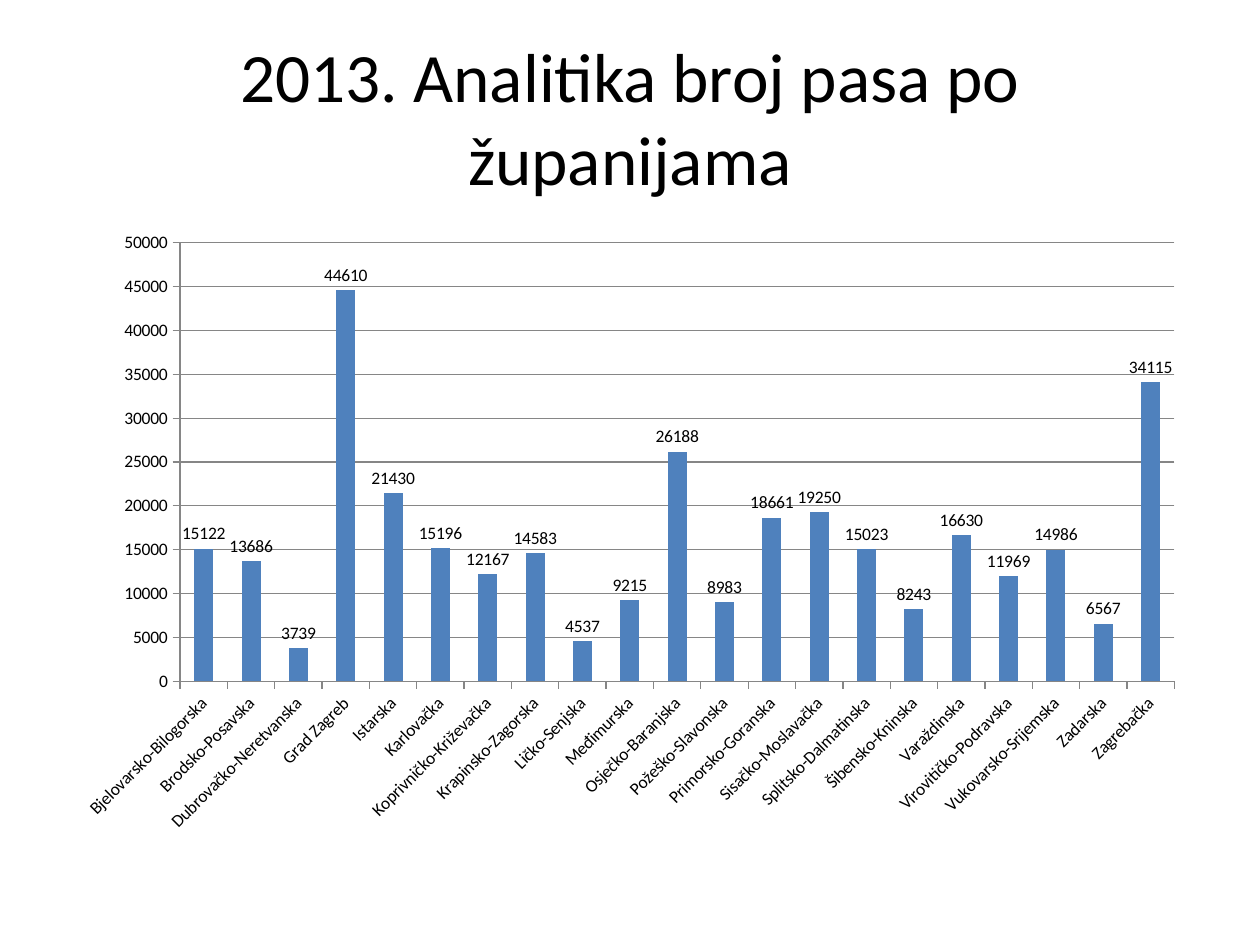
import pptx
import pptx.chart.data
import pptx.dml.color
import pptx.enum.chart
import pptx.enum.text
import pptx.util

Pt = pptx.util.Pt
RGBColor = pptx.dml.color.RGBColor
enum = pptx.enum.chart

BLACK = RGBColor(0x00, 0x00, 0x00)
GRAY = RGBColor(0x86, 0x86, 0x86)
BLUE = RGBColor(0x4F, 0x81, 0xBD)

DOGS = {
    "Bjelovarsko-Bilogorska": 15122,
    "Brodsko-Posavska": 13686,
    "Dubrovačko-Neretvanska": 3739,
    "Grad Zagreb": 44610,
    "Istarska": 21430,
    "Karlovačka": 15196,
    "Koprivničko-Križevačka": 12167,
    "Krapinsko-Zagorska": 14583,
    "Ličko-Senjska": 4537,
    "Međimurska": 9215,
    "Osječko-Baranjska": 26188,
    "Požeško-Slavonska": 8983,
    "Primorsko-Goranska": 18661,
    "Sisačko-Moslavačka": 19250,
    "Splitsko-Dalmatinska": 15023,
    "Šibensko-Kninska": 8243,
    "Varaždinska": 16630,
    "Virovitičko-Podravska": 11969,
    "Vukovarsko-Srijemska": 14986,
    "Zadarska": 6567,
    "Zagrebačka": 34115,
}


class Deck:
    face = "Calibri"

    def __init__(self, wide, high):
        self.file = pptx.Presentation()
        self.file.slide_width, self.file.slide_height = Pt(wide), Pt(high)
        self.slide = None

    def add(self):
        """Start a slide that has only a title placeholder."""
        self.slide = self.file.slides.add_slide(self.file.slide_layouts[5])

    def style(self, font, size):
        font.name, font.size = self.face, Pt(size)
        font.color.rgb = BLACK

    def title(self, text, left, top, wide, high, size):
        box = self.slide.shapes.title
        box.left, box.top, box.width, box.height = map(Pt, (left, top, wide, high))
        frame = box.text_frame
        frame.text = text
        frame.word_wrap = True
        frame.auto_size = pptx.enum.text.MSO_AUTO_SIZE.NONE
        frame.vertical_anchor = pptx.enum.text.MSO_ANCHOR.MIDDLE
        line = frame.paragraphs[0]
        line.alignment = pptx.enum.text.PP_ALIGN.CENTER
        self.style(line.runs[0].font, size)

    def axis(self, axis, size):
        axis.format.line.color.rgb = GRAY
        axis.major_tick_mark = enum.XL_TICK_MARK.OUTSIDE
        axis.minor_tick_mark = enum.XL_TICK_MARK.NONE
        self.style(axis.tick_labels.font, size)

    def columns(self, name, items, left, top, wide, high, size):
        data = pptx.chart.data.CategoryChartData(number_format="General")
        data.categories = list(items)
        data.add_series(name, list(items.values()))
        chart = self.slide.shapes.add_chart(
            enum.XL_CHART_TYPE.COLUMN_CLUSTERED,
            *map(Pt, (left, top, wide, high)), data).chart
        chart.has_title = chart.has_legend = False
        self.style(chart.font, size)

        plot = chart.plots[0]
        plot.gap_width, plot.vary_by_categories = 150, False
        fill = plot.series[0].format.fill
        fill.solid()
        fill.fore_color.rgb = BLUE
        plot.has_data_labels = True
        labels = plot.data_labels
        labels.show_value = True
        labels.position = enum.XL_LABEL_POSITION.OUTSIDE_END
        self.style(labels.font, size)

        cats, vals = chart.category_axis, chart.value_axis
        self.axis(cats, size)
        self.axis(vals, size)
        # Slant the county names upward by 45 degrees.
        cats._element.txPr.bodyPr.set("rot", str(-45 * 60000))
        vals.minimum_scale, vals.maximum_scale, vals.major_unit = 0, 50000, 5000
        vals.has_major_gridlines = True
        vals.major_gridlines.format.line.color.rgb = GRAY


def main():
    deck = Deck(720, 540)
    deck.add()
    deck.title("2013. Analitika broj pasa po županijama", 36, 21.6, 648, 90, 39.6)
    deck.columns("Series 1", DOGS, 36, 126, 648, 356.4, 10)
    deck.file.save("out.pptx")


if __name__ == "__main__":
    main()
